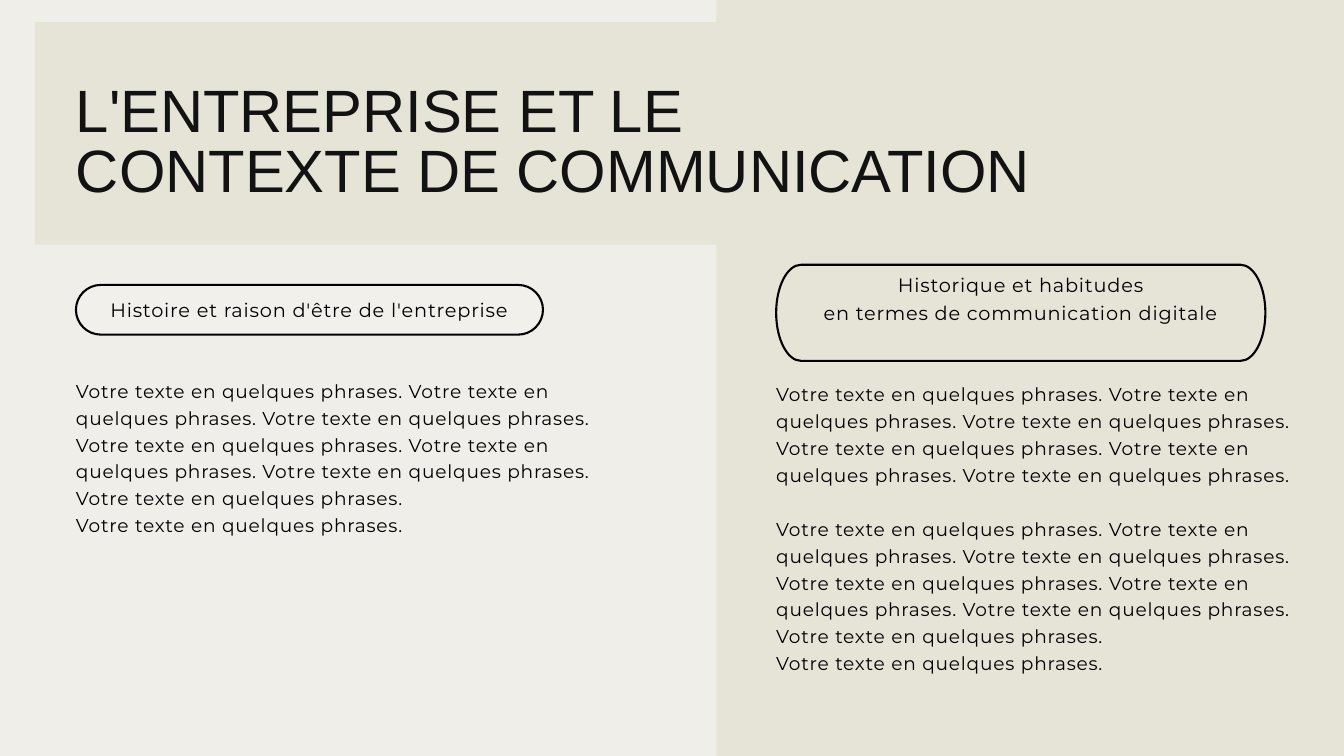
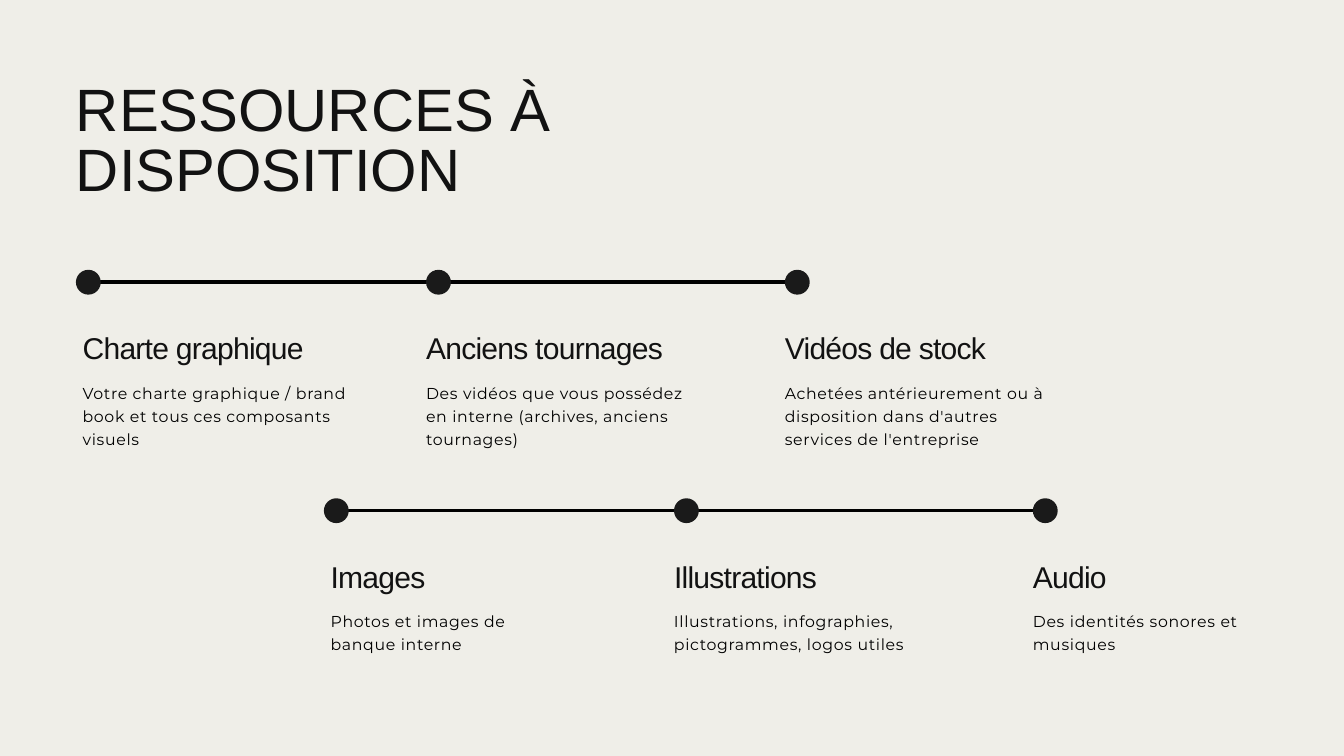
"""Build two slides: the company context and the available resources."""
from pptx import Presentation
from pptx.dml.color import RGBColor
from pptx.enum.shapes import MSO_CONNECTOR, MSO_SHAPE
from pptx.enum.text import MSO_ANCHOR, MSO_AUTO_SIZE, PP_ALIGN
from pptx.oxml.ns import qn
from pptx.util import Inches, Pt
from lxml import etree

BACKGROUND = RGBColor(0xEF, 0xEE, 0xE8)
BAND = RGBColor(0xE6, 0xE3, 0xD7)
PILL = RGBColor(0xF1, 0xF0, 0xEA)
INK = RGBColor(0x12, 0x12, 0x12)
DOT = RGBColor(0x1A, 0x1A, 0x1A)
BLACK = RGBColor(0, 0, 0)

RECTANGLE, OVAL = MSO_SHAPE.RECTANGLE, MSO_SHAPE.OVAL
STRAIGHT = MSO_CONNECTOR.STRAIGHT
TOP, MIDDLE = MSO_ANCHOR.TOP, MSO_ANCHOR.MIDDLE
LEFT, CENTER = PP_ALIGN.LEFT, PP_ALIGN.CENTER
FIXED, GROW = MSO_AUTO_SIZE.NONE, MSO_AUTO_SIZE.SHAPE_TO_FIT_TEXT
TITLE_ONLY = 5

TITLE = dict(font="Arial", size=64, line=64, color=INK)
HEADING = dict(font="Arial", size=32.2, line=41.2, color=INK, spacing=-0.8)
BODY = dict(font="Montserrat", size=19.9, line=28.85, spacing=0.85)
NOTE = dict(font="Montserrat", size=16.9, line=24.5, spacing=0.7)
LABEL = dict(font="Montserrat", size=20.7, line=30, spacing=0.9,
             align=CENTER, anchor=MIDDLE, autosize=FIXED)

MARGIN = 1.13
DOT_SIZE = 0.37
DOT_OFFSETS = (0, 5.21, 10.55)
TEXT_INDENTS = (0.1, 0, 0)
SENTENCE = "Votre texte en quelques phrases."


def write(shape, lines, font, size, line, color=BLACK, spacing=0, align=LEFT,
          anchor=TOP, autosize=GROW, insets=(0, 0, 0, 0), gaps=None):
    """Fill a shape with paragraphs; gaps maps a paragraph index to space before."""
    frame = shape.text_frame
    frame.word_wrap = True
    frame.auto_size = autosize
    frame.vertical_anchor = anchor
    (frame.margin_left, frame.margin_top,
     frame.margin_right, frame.margin_bottom) = map(Inches, insets)
    for index, text in enumerate(lines):
        paragraph = frame.add_paragraph() if index else frame.paragraphs[0]
        paragraph.alignment = align
        paragraph.line_spacing = Pt(line)
        paragraph.space_before = Pt((gaps or {}).get(index, 0))
        run = paragraph.add_run()
        run.text = text
        run.font.name = font
        run.font.size = Pt(size)
        run.font.color.rgb = color
        if spacing:
            run.font._element.set("spc", str(round(spacing * 100)))


def sentences(*counts):
    """Return one paragraph of repeated sentences for each count."""
    return [" ".join([SENTENCE] * count) for count in counts]


def bend(shape, starts):
    """Turn each three line segments from the given indices into one curve."""
    segments = list(shape.element.iter(qn("a:lnTo")))
    for start in starts:
        curve = etree.Element(qn("a:cubicBezTo"))
        segments[start].addprevious(curve)
        for segment in segments[start:start + 3]:
            curve.append(segment[0])
            segment.getparent().remove(segment)


class Deck:
    """Hold the presentation, its style and the current slide."""

    def __init__(self):
        """Start an empty widescreen presentation."""
        self.presentation = Presentation()
        self.presentation.slide_width = Inches(20)
        self.presentation.slide_height = Inches(11.25)
        self.slide = None

    def new_slide(self):
        """Add a title-only slide with the shared background."""
        layout = self.presentation.slide_layouts[TITLE_ONLY]
        self.slide = self.presentation.slides.add_slide(layout)
        fill = self.slide.background.fill
        fill.solid()
        fill.fore_color.rgb = BACKGROUND

    def title(self, lines, top, width):
        """Place the title above everything drawn so far."""
        title = self.slide.shapes.title
        title.left, title.top = Inches(MARGIN), Inches(top)
        title.width, title.height = Inches(width), Inches(1.81)
        title.element.getparent().append(title.element)
        write(title, lines, **TITLE)

    def paint(self, shape, color, outline=None):
        """Give a shape a flat fill and an optional outline."""
        shape.shadow.inherit = False
        shape.fill.solid()
        shape.fill.fore_color.rgb = color
        if outline:
            shape.line.color.rgb = BLACK
            shape.line.width = Pt(outline)
        else:
            shape.line.fill.background()

    def shape(self, kind, left, top, width, height, color):
        """Draw a preset shape without outline."""
        shape = self.slide.shapes.add_shape(
            kind, *map(Inches, (left, top, width, height)))
        self.paint(shape, color)

    def text(self, left, top, width, height, lines, **style):
        """Add a text box."""
        box = self.slide.shapes.add_textbox(
            *map(Inches, (left, top, width, height)))
        write(box, lines, **style)

    def pill(self, left, top, width, height, lines, color, lift):
        """Draw a label with half-ellipse ends, its text raised by the lift."""
        end, radius, pull = 0.37, height / 2, 0.55
        points = []
        for side, inner in ((1, left + width - end), (-1, left + end)):
            middle = top + radius
            outer, control = inner + side * end, inner + side * end * pull
            start, finish = middle - side * radius, middle + side * radius
            reach = side * radius * pull
            points += [(inner, start), (control, start), (outer, middle - reach),
                       (outer, middle), (outer, middle + reach),
                       (control, finish), (inner, finish)]
        points = [(Inches(x), Inches(y)) for x, y in points]
        builder = self.slide.shapes.build_freeform(*points[0])
        builder.add_line_segments(points[1:], close=True)
        shape = builder.convert_to_shape()
        bend(shape, (0, 3, 7, 10))
        self.paint(shape, color, 2.25)
        write(shape, lines, insets=(0.06, 0.06, 0.06, 0.06 + lift), **LABEL)

    def line(self, left, right, y):
        """Draw a horizontal line."""
        connector = self.slide.shapes.add_connector(
            STRAIGHT, *map(Inches, (left, y, right, y)))
        connector.line.color.rgb = BLACK
        connector.line.width = Pt(3.75)
        properties = connector.element.find(qn("p:spPr"))
        etree.SubElement(properties, qn("a:effectLst"))

    def timeline(self, left, y, note_width, items):
        """Draw a line of dots with a heading and a note under each."""
        self.line(left, left + DOT_OFFSETS[-1], y)
        for offset, indent, (heading, note) in zip(DOT_OFFSETS, TEXT_INDENTS, items):
            x = left + offset
            self.shape(OVAL, x, y - DOT_SIZE / 2, DOT_SIZE, DOT_SIZE, DOT)
            self.text(x + indent, y + 0.67, 3.88, 0.56, [heading], **HEADING)
            self.text(x + indent, y + 1.45, note_width, 0.99, [note], **NOTE)


def add_context(deck):
    """Add the slide on the company and its communication context."""
    deck.new_slide()
    deck.shape(RECTANGLE, 10.66, 0, 9.34, 11.25, BAND)
    deck.shape(RECTANGLE, 0.52, 0.33, 19.48, 3.31, BAND)
    deck.title(["L'ENTREPRISE ET LE", "CONTEXTE DE COMMUNICATION"], 1.26, 17.7)
    deck.text(MARGIN, 5.58, 8.39, 2.75, sentences(3, 4, 1), **BODY)
    deck.text(11.55, 5.63, 8.26, 4.73, sentences(6, 3, 4, 1),
              gaps={1: BODY["line"]}, **BODY)
    deck.pill(MARGIN, 4.24, 6.95, 0.74,
              ["Histoire et raison d'être de l'entreprise"], PILL, 0.08)
    deck.pill(11.55, 3.94, 7.28, 1.43,
              ["Historique et habitudes", "en termes de communication digitale"],
              BAND, 0.5)


def add_resources(deck):
    """Add the slide listing the available resources."""
    deck.new_slide()
    deck.title(["RESSOURCES À DISPOSITION"], 1.25, 10.81)
    deck.timeline(MARGIN, 4.2, 4.07, [
        ("Charte graphique",
         "Votre charte graphique / brand book et tous ces composants visuels"),
        ("Anciens tournages",
         "Des vidéos que vous possédez en interne (archives, anciens tournages)"),
        ("Vidéos de stock",
         "Achetées antérieurement ou à disposition dans d'autres services de l'entreprise"),
    ])
    deck.timeline(4.82, 7.6, 3.5, [
        ("Images", "Photos et images de banque interne"),
        ("Illustrations", "Illustrations, infographies, pictogrammes, logos utiles"),
        ("Audio", "Des identités sonores et musiques"),
    ])


def main():
    """Build and save the presentation."""
    deck = Deck()
    add_context(deck)
    add_resources(deck)
    deck.presentation.save("out.pptx")


if __name__ == "__main__":
    main()
